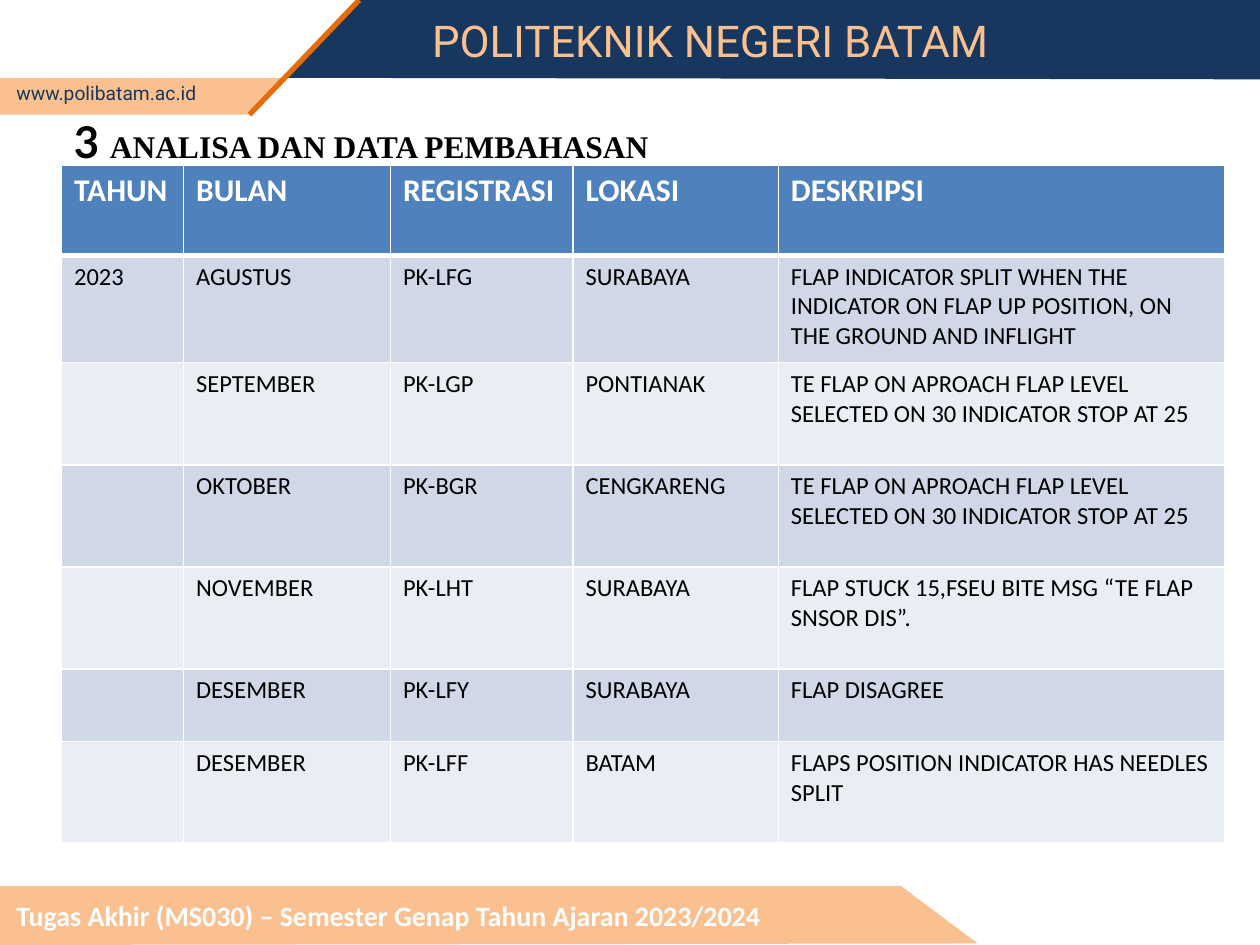
from typing import NamedTuple

from lxml.etree import SubElement as Sub
from pptx import Presentation
from pptx.dml.color import RGBColor as Rgb
from pptx.enum.shapes import MSO_CONNECTOR as Link
from pptx.oxml.ns import qn
from pptx.util import Cm, Pt

NAVY, PEACH, RUST = "17375E", "FAC090", "E46C0A"
WHITE, BLACK, BLUE = "FFFFFF", "000000", "4F81BD"
BANDS = ("D0D8E8", "E9EDF4")


class Band(NamedTuple):
    color: str
    points: list[tuple[float, float]]


class Run(NamedTuple):
    text: str
    font: str
    size: float
    color: str
    bold: bool = False


class Label(NamedTuple):
    left: float
    top: float
    width: float
    height: float
    runs: list[Run]


SHAPES = [
    Band(PEACH, [(0, 2.31), (5.03, 2.31), (5.72, 1.57), (0, 1.57)]),
    Band(NAVY, [(25.4, 0), (7.24, 0), (5.69, 1.57), (25.4, 1.6)]),
    Band(PEACH, [(0, 17.86), (18.16, 17.86), (19.71, 19.02), (0, 19.05)]),
]
LABELS = [
    Label(0.08, 1.52, 6.12, 0.74, [Run("www.polibatam.ac.id", "Roboto", 11, NAVY)]),
    Label(8.46, 0.15, 14.71, 1.32, [Run("POLITEKNIK NEGERI BATAM", "Roboto", 25, PEACH)]),
    Label(0.08, 17.98, 18.54, 0.94, [
        Run("Tugas Akhir (MS030) – Semester Genap Tahun Ajaran 2023/2024",
            "Calibri", 16, WHITE, True)]),
    Label(1.24, 2.18, 22.89, 1.32, [
        Run("3 ", "Lato", 25, BLACK, True),
        Run("ANALISA DAN DATA PEMBAHASAN", "Times New Roman", 18, BLACK, True)]),
]
WIDTHS = [2.46, 4.17, 3.68, 4.14, 8.99]
HEIGHTS = [1.82, 2.16, 2.06, 2.06, 2.06, 1.46, 2.04]
STOP = "TE FLAP ON APROACH FLAP LEVEL SELECTED ON 30 INDICATOR STOP AT 25"
ROWS = [
    ("TAHUN", "BULAN", "REGISTRASI", "LOKASI", "DESKRIPSI"),
    ("2023", "AGUSTUS", "PK-LFG", "SURABAYA",
     "FLAP INDICATOR SPLIT WHEN THE INDICATOR ON FLAP UP POSITION, "
     "ON THE GROUND AND INFLIGHT"),
    ("", "SEPTEMBER", "PK-LGP", "PONTIANAK", STOP),
    ("", "OKTOBER", "PK-BGR", "CENGKARENG", STOP),
    ("", "NOVEMBER", "PK-LHT", "SURABAYA",
     "FLAP STUCK 15,FSEU BITE MSG “TE FLAP SNSOR DIS”."),
    ("", "DESEMBER", "PK-LFY", "SURABAYA", "FLAP DISAGREE"),
    ("", "DESEMBER", "PK-LFF", "BATAM", "FLAPS POSITION INDICATOR HAS NEEDLES SPLIT"),
]


def paint(target, color: str) -> None:
    target.solid()
    target.fore_color.rgb = Rgb.from_string(color)


def style(font, run: Run) -> None:
    font.name, font.size, font.bold = run.font, Pt(run.size), run.bold
    paint(font.fill, run.color)


def draw_band(slide, band: Band) -> None:
    first, *rest = [(Cm(x), Cm(y)) for x, y in band.points]
    pen = slide.shapes.build_freeform(*first)
    pen.add_line_segments(rest)
    shape = pen.convert_to_shape()
    shape.shadow.inherit = False
    paint(shape.fill, band.color)
    shape.line.fill.background()


def draw_slash(slide) -> None:
    line = slide.shapes.add_connector(Link.STRAIGHT, Cm(5.03), Cm(2.31), Cm(7.24), Cm(0))
    line.line.width = Pt(3)
    paint(line.line.fill, RUST)
    Sub(line._element.spPr, qn("a:effectLst"))


def draw_label(slide, label: Label) -> None:
    frame = slide.shapes.add_textbox(*map(Cm, label[:4])).text_frame
    frame.word_wrap = True
    para = frame.paragraphs[0]
    for item in label.runs:
        run = para.add_run()
        run.text = item.text
        style(run.font, item)


def edge(cell, side: str, width: float) -> None:
    line = Sub(cell._tc.get_or_add_tcPr(), qn(f"a:ln{side}"), w=str(Pt(width)))
    fill = Sub(line, qn("a:solidFill"))
    Sub(fill, qn("a:srgbClr"), val=WHITE)


def draw_cell(cell, text: str, row: int) -> None:
    head = row == 0
    for side in "LRTB":
        thick = (side, row) in (("B", 0), ("T", 1))
        edge(cell, side, 3 if thick else 1)
    paint(cell.fill, BLUE if head else BANDS[(row - 1) % 2])
    cell.text = text
    look = Run(text, "Calibri", 18 if head else 14, WHITE if head else BLACK, head)
    style(cell.text_frame.paragraphs[0].font, look)


def draw_table(slide) -> None:
    frame = slide.shapes.add_table(len(ROWS), len(WIDTHS), Cm(1.24), Cm(3.33),
                                   Cm(sum(WIDTHS)), Cm(sum(HEIGHTS)))
    table = frame.table
    for col, width in zip(table.columns, WIDTHS):
        col.width = Cm(width)
    for row, height in zip(table.rows, HEIGHTS):
        row.height = Cm(height)
    for r, texts in enumerate(ROWS):
        for c, text in enumerate(texts):
            draw_cell(table.cell(r, c), text, r)


def main() -> None:
    """Build the slide of flap findings and save it."""
    deck = Presentation()
    deck.slide_width, deck.slide_height = Cm(25.4), Cm(19.05)
    slide = deck.slides.add_slide(deck.slide_layouts[6])
    for band in SHAPES:
        draw_band(slide, band)
    draw_slash(slide)
    for label in LABELS:
        draw_label(slide, label)
    draw_table(slide)
    deck.save("out.pptx")


if __name__ == "__main__":
    main()
